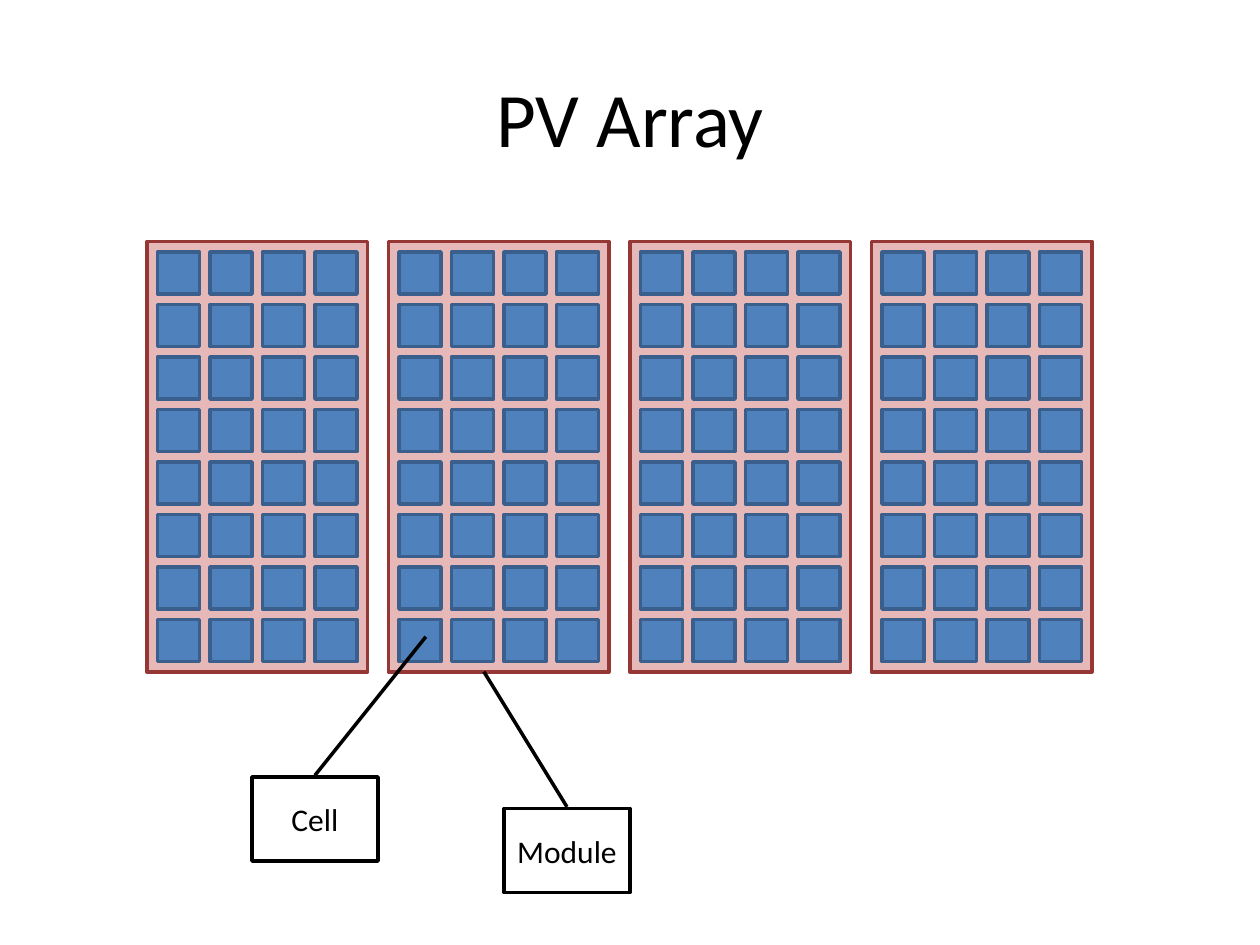
from pptx import Presentation
from pptx.dml.color import RGBColor as RGB
from pptx.enum.shapes import MSO_SHAPE as Shape
from pptx.enum.text import MSO_ANCHOR as Anchor, PP_ALIGN as Align
from pptx.util import Inches, Pt

COLORS = {
    "black": "000000",
    "white": "FFFFFF",
    "cell": "4F81BD",
    "cell edge": "3A5F8C",
    "panel": "E6B9B8",
    "panel edge": "953735",
}

# The array sits on a grid of twelfths of an inch
UNIT = Inches(1) / 12
PAD, CELL, GAP = UNIT, 4 * UNIT, UNIT
COLS, ROWS = 4, 8
STEP = CELL + GAP


def color(name):
    return RGB.from_string(COLORS[name])


def add_box(shapes, kind, box, fill, edge):
    shape = shapes.add_shape(kind, *(round(n) for n in box))
    shape.shadow.inherit = False
    shape.fill.solid()
    shape.fill.fore_color.rgb = color(fill)
    shape.line.color.rgb = color(edge)
    shape.line.width = Pt(2)
    return shape


def set_text(shape, text, size):
    frame = shape.text_frame
    format = {"word_wrap": True, "vertical_anchor": Anchor.MIDDLE,
              "margin_left": 0, "margin_right": 0}
    for name, value in format.items():
        setattr(frame, name, value)
    para = frame.paragraphs[0]
    para.text = text
    para.alignment = Align.CENTER
    font = para.runs[0].font
    for name, value in {"name": "Calibri", "size": Pt(size)}.items():
        setattr(font, name, value)
    font.color.rgb = color("black")


def add_title(slide, box, text):
    set_text(slide.shapes.add_textbox(*box), text, 44)


def add_module(slide, box):
    """One panel with its grid of cells, kept as a group."""
    left, top = box[:2]
    group = slide.shapes.add_group_shape()
    add_box(group.shapes, Shape.RECTANGLE, box, "panel", "panel edge")
    for row in range(ROWS):
        for col in range(COLS):
            cell = (left + PAD + col * STEP, top + PAD + row * STEP, CELL, CELL)
            add_box(group.shapes, Shape.RECTANGLE, cell, "cell", "cell edge")


def add_array(slide, left, top, count):
    """A row of equal modules."""
    width = 2 * PAD + COLS * STEP - GAP
    height = 2 * PAD + ROWS * STEP - GAP
    for i in range(count):
        add_module(slide, (left + i * (width + 2 * UNIT), top, width, height))


def add_label(slide, box, text, tip):
    """A callout; tip is (y, x) as a share of the box size."""
    label = add_box(slide.shapes, Shape.LINE_CALLOUT_1, box, "white", "black")
    for i, value in enumerate((-0.02, 0.5, *tip)):
        label.adjustments[i] = value
    set_text(label, text, 18)


def main():
    prs = Presentation()
    prs.slide_width, prs.slide_height = Inches(10), Inches(7.5)
    slide = prs.slides.add_slide(prs.slide_layouts[6])

    # Modules
    add_array(slide, 14 * UNIT, 23 * UNIT, 4)

    # Labels
    size = (Inches(1), 8 * UNIT)
    add_label(slide, (Inches(2), 74 * UNIT, *size), "Cell", (-1.67, 1.38))
    add_label(slide, (Inches(4), 77 * UNIT, *size), "Module", (-1.63, -0.16))

    # Title
    add_title(slide, (Inches(0.5), Inches(0.3), Inches(9), Inches(1.25)), "PV Array")

    prs.save("out.pptx")


if __name__ == "__main__":
    main()
